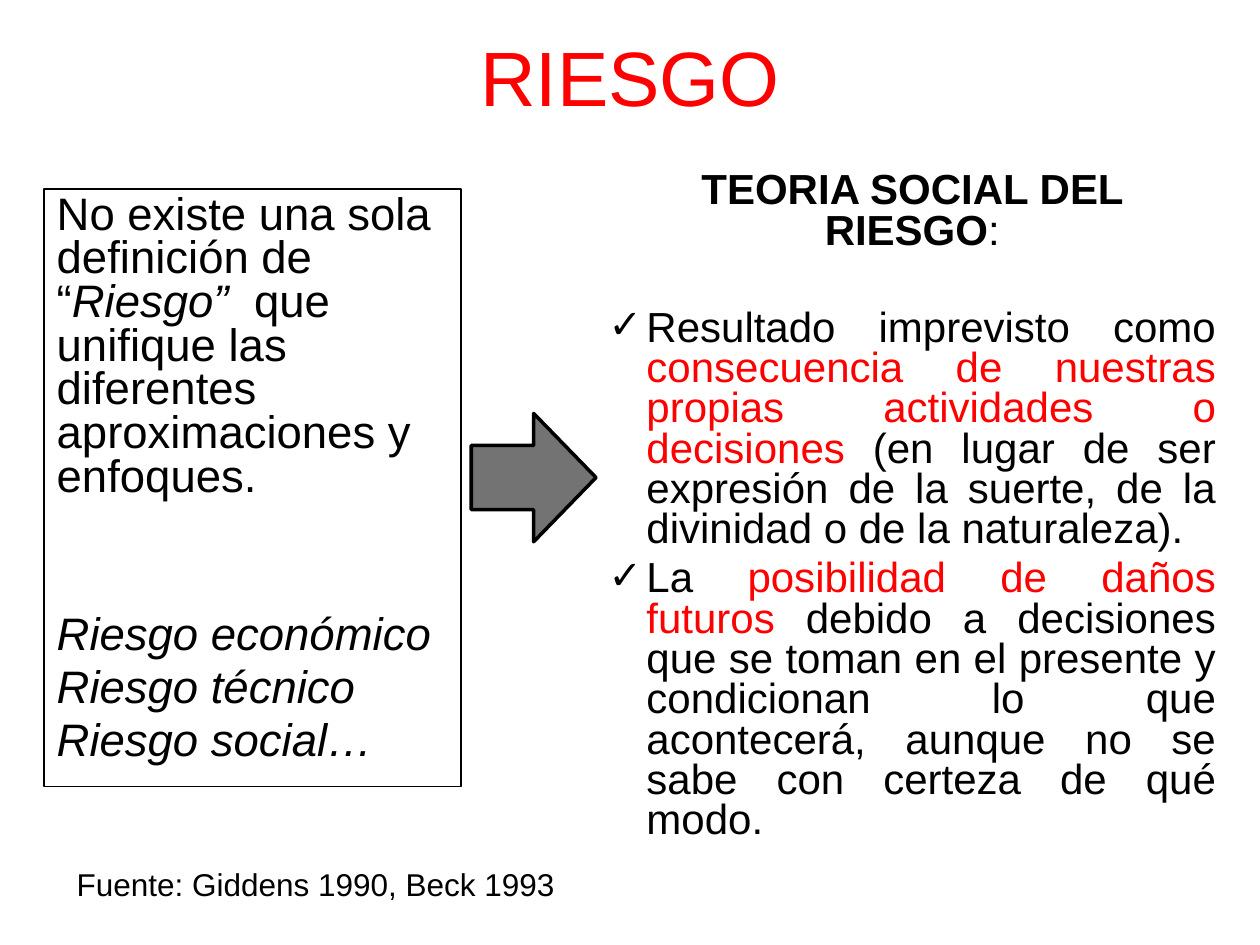
import dataclasses

import lxml.etree
import pptx
import pptx.dml.color
import pptx.enum.shapes
import pptx.enum.text
import pptx.oxml.ns
import pptx.util

Pt = pptx.util.Pt
Align = pptx.enum.text.PP_ALIGN
Anchor = pptx.enum.text.MSO_ANCHOR
BLACK = "000000"
RED = "FF0000"
GRAY = "737373"


@dataclasses.dataclass(frozen=True)
class Run:
    text: str
    color: str = BLACK
    bold: bool = False
    italic: bool = False


@dataclasses.dataclass(frozen=True)
class Para:
    runs: tuple[Run, ...]
    size: float
    align: Align = Align.LEFT
    before: float = 0
    lines: float = 0.8
    mark: str = ""


@dataclasses.dataclass(frozen=True)
class Box:
    left: float
    top: float
    width: float
    height: float
    paras: tuple[Para, ...]
    anchor: Anchor = Anchor.TOP


def paint(target, color: str) -> None:
    target.rgb = pptx.dml.color.RGBColor.from_string(color)


def apply(target, values: dict) -> None:
    for name, value in values.items():
        setattr(target, name, value)


def spot(left: float, top: float, width: float, height: float) -> dict:
    names = ("left", "top", "width", "height")
    return dict(zip(names, map(Pt, (left, top, width, height))))


def outline(shape, weight: float) -> None:
    shape.line.width = Pt(weight)
    shape.line.fill.solid()
    paint(shape.line.fill.fore_color, BLACK)


def bullet(props, mark: str) -> None:
    hang = Pt(21.6) if mark else 0
    props.set("marL", str(hang))
    props.set("indent", str(-hang))
    parts = {"buSzPct": "val", "buChar": "char"} if mark else {"buNone": ""}
    values = {"buSzPct": "95000", "buChar": mark}
    for tag, key in parts.items():
        item = lxml.etree.SubElement(props, pptx.oxml.ns.qn(f"a:{tag}"))
        if key:
            item.set(key, values[tag])


def write(para, data: Para) -> None:
    bullet(para._p.get_or_add_pPr(), data.mark)
    apply(para, {
        "alignment": data.align,
        "line_spacing": data.lines,
        "space_before": Pt(data.before),
        "space_after": Pt(0),
    })
    for part in data.runs:
        run = para.add_run()
        run.text = part.text
        apply(run.font, {
            "name": "Arial",
            "size": Pt(data.size),
            "bold": part.bold,
            "italic": part.italic,
        })
        paint(run.font.color, part.color)


def fill(shape, box: Box) -> None:
    apply(shape, spot(box.left, box.top, box.width, box.height))
    frame = shape.text_frame
    apply(frame, {
        "word_wrap": True,
        "auto_size": pptx.enum.text.MSO_AUTO_SIZE.NONE,
        "vertical_anchor": box.anchor,
    })
    for index, data in enumerate(box.paras):
        para = frame.add_paragraph() if index else frame.paragraphs[0]
        write(para, data)


TITLE = Box(36, 9.4, 648, 67.7, (
    Para((Run("RIESGO", RED),), 44, Align.CENTER, lines=1),
), Anchor.MIDDLE)

KINDS = (
    ("Riesgo económico", 65.4),
    ("Riesgo técnico", 5.4),
    ("Riesgo social…", 5.4),
)
INTRO = Box(25.2, 108, 238.3, 334.5 + 6.8, (
    Para((
        Run("No existe una sola definición de “"),
        Run("Riesgo”", italic=True),
        Run("  que unifique las diferentes aproximaciones y enfoques."),
    ), 26),
    *(Para((Run(text, italic=True),), 26, before=gap) for text, gap in KINDS),
))

THEORY = Box(340.6, 95, 361.4, 396.7, (
    Para((Run("TEORIA SOCIAL DEL RIESGO", bold=True), Run(":")),
         24, Align.CENTER),
    Para((
        Run("Resultado imprevisto como "),
        Run("consecuencia de nuestras propias actividades o decisiones", RED),
        Run(" (en lugar de ser expresión de la suerte, de la divinidad "
            "o de la naturaleza)."),
    ), 24, Align.JUSTIFY, 32.4, mark="✓"),
    Para((
        Run("La "),
        Run("posibilidad de daños futuros", RED),
        Run(" debido a decisiones que se toman en el presente y condicionan "
            "lo que acontecerá, aunque no se sabe con certeza de qué modo."),
    ), 24, Align.JUSTIFY, 5, mark="✓"),
))

SOURCE = Box(36.7, 491, 635, 28.8, (
    Para((Run("Fuente: Giddens 1990, Beck 1993"),), 18, lines=1),
))


def main() -> None:
    deck = pptx.Presentation()
    apply(deck, {"slide_width": Pt(720), "slide_height": Pt(540)})
    slide = deck.slides.add_slide(deck.slide_layouts[3])
    title, intro, theory = slide.placeholders
    for shape, box in ((title, TITLE), (intro, INTRO), (theory, THEORY)):
        fill(shape, box)
    outline(intro, 0.75)

    arrow = slide.shapes.add_shape(
        pptx.enum.shapes.MSO_SHAPE.RIGHT_ARROW,
        **spot(269.3, 236.2, 71.3, 73.4))
    arrow.shadow.inherit = False
    arrow.fill.solid()
    paint(arrow.fill.fore_color, GRAY)
    outline(arrow, 2)

    note = slide.shapes.add_textbox(0, 0, 0, 0)
    fill(note, SOURCE)
    deck.save("out.pptx")


if __name__ == "__main__":
    main()
